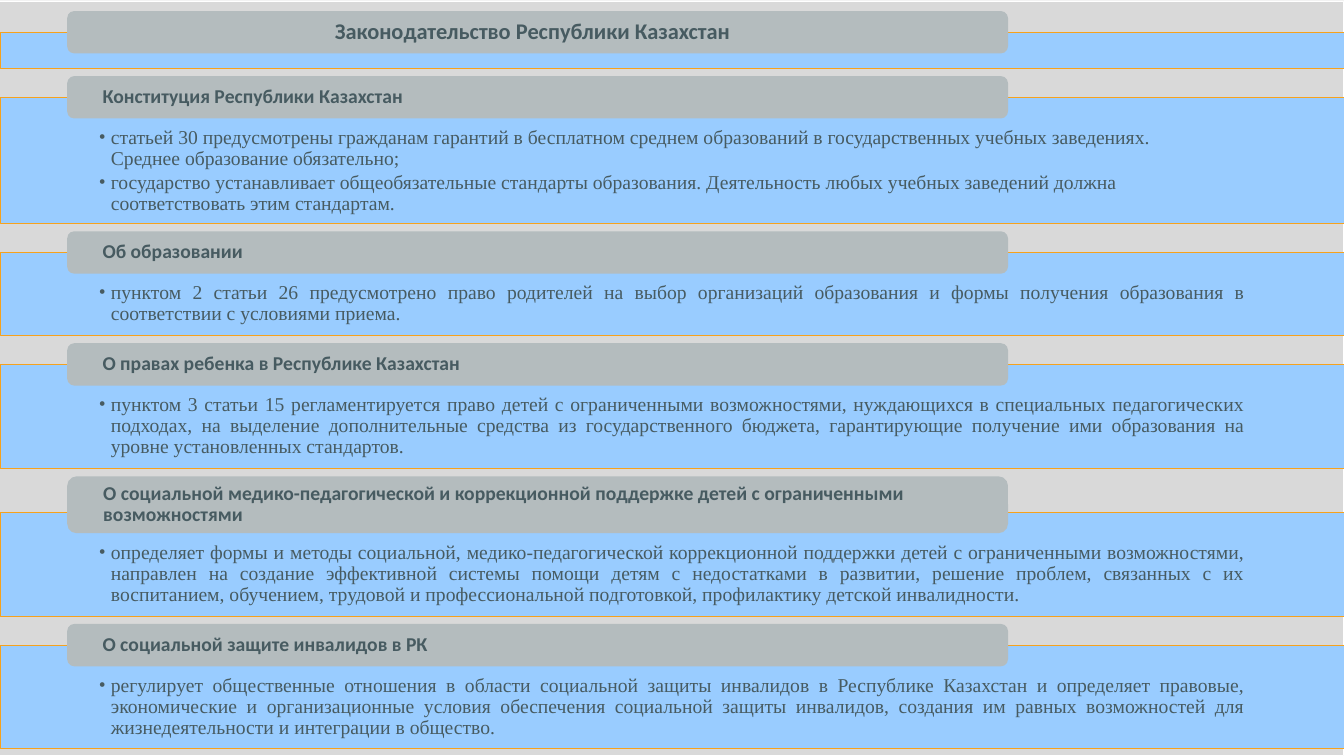
from lxml.etree import SubElement as Sub
from pptx import Presentation
from pptx.dml.color import RGBColor
from pptx.enum.shapes import MSO_SHAPE as Form
from pptx.enum.text import MSO_ANCHOR as Anchor, MSO_AUTO_SIZE as Fit, PP_ALIGN as Align
from pptx.oxml.ns import qn
from pptx.util import Inches, Pt

PAPER = RGBColor(0xF2, 0xF2, 0xF2)
PANEL = RGBColor(0xD9, 0xD9, 0xD9)
WHITE = RGBColor(0xFF, 0xFF, 0xFF)
BLUE = RGBColor(0x99, 0xCC, 0xFF)
AMBER = RGBColor(0xF6, 0xA2, 0x1D)
GREY = RGBColor(0xB4, 0xBC, 0xBE)
INK = RGBColor(0x47, 0x5B, 0x61)

COLS, ROWS = 20, 750
GAP, LAP, TOP = 7.5, 21, 11
SERIF, SANS = "Times New Roman", "Calibri"
TITLE = "Законодательство Республики Казахстан"
LAWS = [
    ("Конституция Республики Казахстан", 42, 125.5, Align.LEFT, [
        "статьей 30 предусмотрены гражданам гарантий в бесплатном среднем образований в государственных учебных заведениях. Среднее образование обязательно;",
        "государство устанавливает общеобязательные стандарты образования. Деятельность любых учебных заведений должна соответствовать этим стандартам.",
    ]),
    ("Об образовании", 42, 82.5, Align.JUSTIFY, [
        "пунктом 2 статьи 26 предусмотрено право родителей на выбор организаций образования и формы получения образования в соответствии с условиями приема.",
    ]),
    ("О правах ребенка в Республике Казахстан", 42, 103.5, Align.JUSTIFY, [
        "пунктом 3 статьи 15 регламентируется право детей с ограниченными возможностями, нуждающихся в специальных педагогических подходах, на выделение дополнительные средства из государственного бюджета, гарантирующие получение ими образования на уровне установленных стандартов.",
    ]),
    ("О социальной медико-педагогической и коррекционной поддержке детей с ограниченными возможностями", 56.5, 103.5, Align.JUSTIFY, [
        "определяет формы и методы социальной, медико-педагогической коррекционной поддержки детей с ограниченными возможностями, направлен на создание эффективной системы помощи детям с недостатками в развитии, решение проблем, связанных с их воспитанием, обучением, трудовой и профессиональной подготовкой, профилактику детской инвалидности.",
    ]),
    ("О социальной защите инвалидов в РК", 42, 102.5, Align.JUSTIFY, [
        "регулирует общественные отношения в области социальной защиты инвалидов в Республике Казахстан и определяет правовые, экономические и организационные условия обеспечения социальной защиты инвалидов, создания им равных возможностей для жизнедеятельности и интеграции в общество.",
    ]),
]


class Deck:
    """Holds the style and the current slide, and draws its elements on a grid."""

    def __init__(self):
        self.prs = Presentation()
        self.prs.slide_width, self.prs.slide_height = Inches(13.33), Inches(7.5)
        self.slide = self.prs.slides.add_slide(self.prs.slide_layouts[5])
        self.slide.background.fill.solid()
        self.slide.background.fill.fore_color.rgb = PAPER

    def frame(self, col, row, wide, high):
        x, y = self.prs.slide_width / COLS, self.prs.slide_height / ROWS
        return [round(n) for n in (col * x, row * y, wide * x, high * y)]

    def box(self, form, place, fill, edge=None, width=0):
        shape = self.slide.shapes.add_shape(form, *self.frame(*place))
        shape.shadow.inherit = False
        shape.fill.solid()
        shape.fill.fore_color.rgb = fill
        if edge is None:
            shape.line.fill.background()
        else:
            shape.line.color.rgb = edge
            shape.line.width = Pt(width)
        return shape

    def inset(self, shape, anchor, *sides):
        text = shape.text_frame
        text.word_wrap, text.auto_size = True, Fit.NONE
        text.vertical_anchor = anchor
        text.margin_left, text.margin_top, text.margin_right, text.margin_bottom = map(Inches, sides)
        return text

    def style(self, para, face, size, bold, align):
        para.alignment, para.line_spacing = align, 0.9
        for run in para.runs:
            font = run.font
            font.name, font.size, font.bold = face, Pt(size), bold
            font.color.rgb = INK

    def panel(self):
        self.box(Form.RECTANGLE, (0, 1.5, COLS, ROWS - 1.5), PANEL, WHITE, 0.75)

    def band(self, row, high, align=Align.LEFT, items=()):
        shape = self.box(Form.RECTANGLE, (0, row, COLS, high), BLUE, AMBER, 0.5)
        if not items:
            return
        right = 1.5 if align == Align.LEFT else 0.98
        text = self.inset(shape, Anchor.TOP, 0.98, 0.3, right, 0.11)
        text.text = "\n".join(items)
        for para in text.paragraphs:
            self.style(para, SERIF, 14, False, align)
            para.level, para.space_after = 1, Pt(2.1)
            props = para._p.get_or_add_pPr()
            props.set("marL", str(Inches(0.12)))
            props.set("indent", str(-Inches(0.12)))
            Sub(props, qn("a:buFont"), typeface=SERIF)
            Sub(props, qn("a:buChar"), char="•")

    def label(self, shape, words, size, align, left, right):
        text = self.inset(shape, Anchor.MIDDLE, left, 0.02, right, 0.02)
        text.text = words
        self.style(text.paragraphs[0], SANS, size, True, align)

    def pill(self, row, high):
        return self.box(Form.ROUNDED_RECTANGLE, (1, row, 14, high), GREY)

    def head(self, row, high, words):
        self.label(self.pill(row, high), words, 14, Align.LEFT, 0.33, 0.33)

    def title(self, row, high, words):
        self.pill(row, high)
        shape = self.slide.shapes.title
        shape.left, shape.top, shape.width, shape.height = self.frame(1, row, 14, high)
        shape.element.getparent().append(shape.element)
        self.label(shape, words, 16, Align.CENTER, 0.35, 0.45)


def main():
    deck = Deck()
    deck.panel()
    row = TOP + 42 - LAP
    deck.band(row, 36)
    deck.title(TOP, 42, TITLE)
    row += 36 + GAP
    for name, high, deep, align, items in LAWS:
        start = row + high - LAP
        deck.band(start, deep, align, items)
        deck.head(row, high, name)
        row = start + deep + GAP
    deck.prs.save("out.pptx")


if __name__ == "__main__":
    main()
